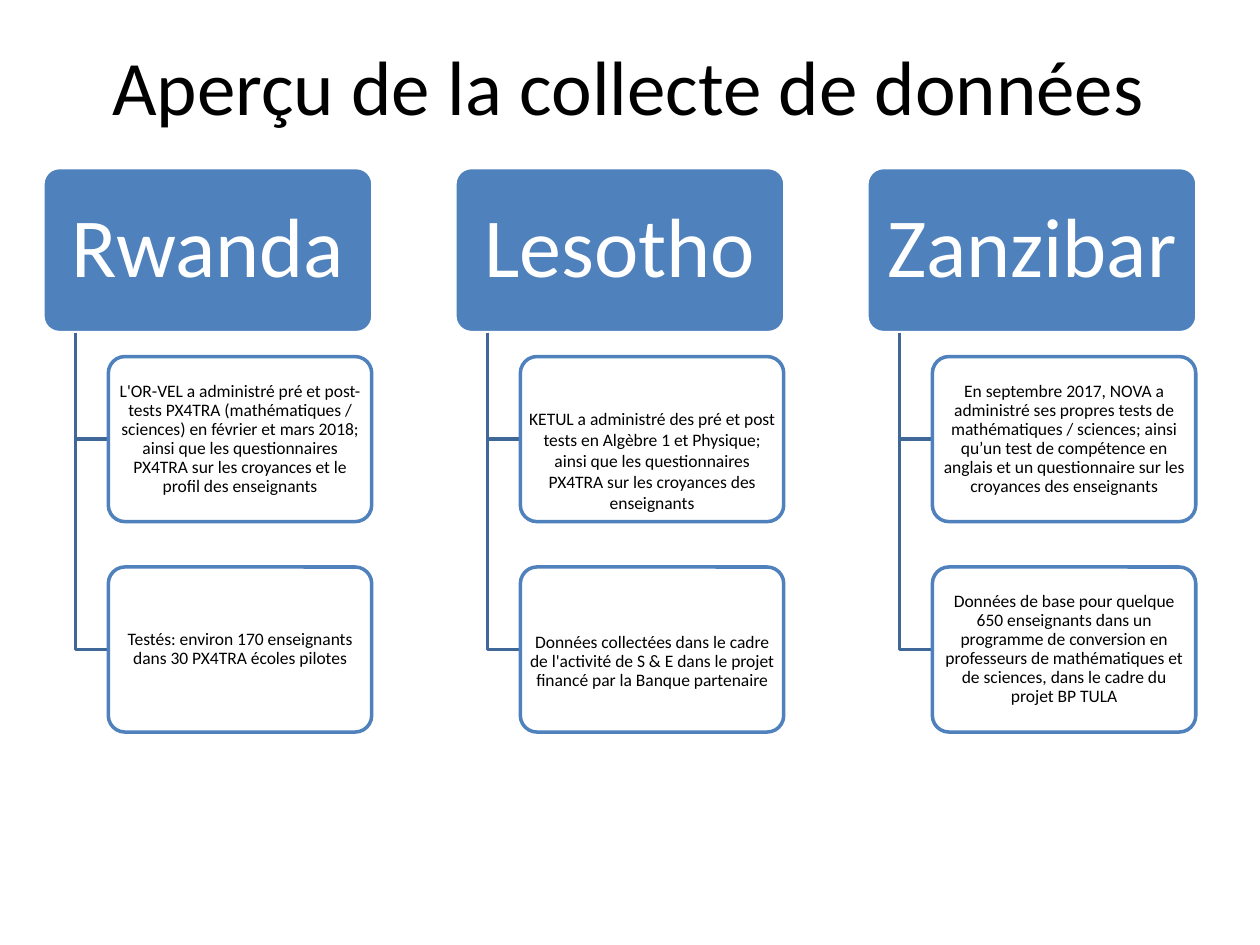
from lxml import etree
from pptx import Presentation
from pptx.dml.color import RGBColor
from pptx.enum import shapes, text
from pptx.oxml import ns
from pptx.util import Inches, Pt

BLUE = RGBColor(0x4F, 0x81, 0xBD)
DARK_BLUE = RGBColor(0x3F, 0x67, 0x97)
WHITE = RGBColor(0xFF, 0xFF, 0xFF)
BLACK = RGBColor(0x00, 0x00, 0x00)
FONT = "Calibri"

# Column grid, in inches
LEFT, COLUMN_STEP = 0.34, 3.27
HEADER_TOP, HEADER_WIDTH, BOX_HEIGHT = 1.33, 2.62, 1.31
INDENT = 0.26
CARD_TOP, CARD_STEP, CARD_WIDTH = 2.83, 1.67, 2.09

# Country, then its cards: wording, line spacing, extra space above the text
COLUMNS = [
    ("Rwanda", [
        ("L'OR-VEL a administré pré et post-tests PX4TRA (mathématiques / sciences) "
         "en février et mars 2018; ainsi que les questionnaires PX4TRA sur les "
         "croyances et le profil des enseignants", 0.9, 0),
        ("Testés: environ 170 enseignants dans 30 PX4TRA écoles pilotes", 0.9, 0),
    ]),
    ("Lesotho", [
        ("KETUL a administré des pré et post tests en Algèbre 1 et Physique; ainsi "
         "que les questionnaires PX4TRA sur les croyances des enseignants", 1.0, 0.34),
        ("Données collectées dans le cadre de l'activité de S & E dans le projet "
         "financé par la Banque partenaire", 0.9, 0.2),
    ]),
    ("Zanzibar", [
        ("En septembre 2017, NOVA a administré ses propres tests de mathématiques / "
         "sciences; ainsi qu’un test de compétence en anglais et un questionnaire "
         "sur les croyances des enseignants", 0.9, 0),
        ("Données de base pour quelque 650 enseignants dans un programme de "
         "conversion en professeurs de mathématiques et de sciences, dans le cadre "
         "du projet BP TULA", 0.9, 0),
    ]),
]


def write(box, wording, size, color, spacing=1.0, side=0.1, top=0.05, bottom=0.05):
    frame = box.text_frame
    frame.word_wrap = True
    frame.vertical_anchor = text.MSO_ANCHOR.MIDDLE
    frame.margin_left = frame.margin_right = Inches(side)
    frame.margin_top, frame.margin_bottom = Inches(top), Inches(bottom)
    para = frame.paragraphs[0]
    para.text = wording
    para.alignment = text.PP_ALIGN.CENTER
    para.line_spacing = spacing
    para.font.name = FONT
    para.font.size = Pt(size)
    para.font.color.rgb = color


def add_title(page, wording):
    box = page.shapes.add_textbox(Inches(0.49), Inches(0.17), Inches(9), Inches(1))
    write(box, wording, 44, BLACK)


def add_rounded_box(page, left, top, width, fill, line):
    box = page.shapes.add_shape(
        shapes.MSO_SHAPE.ROUNDED_RECTANGLE,
        Inches(left), Inches(top), Inches(width), Inches(BOX_HEIGHT))
    box.adjustments[0] = 0.1
    box.shadow.inherit = False
    box.fill.solid()
    box.fill.fore_color.rgb = fill
    box.line.color.rgb = line
    box.line.width = Pt(2)
    return box


def add_header(page, left, country):
    box = add_rounded_box(page, left, HEADER_TOP, HEADER_WIDTH, BLUE, WHITE)
    write(box, country, 48, WHITE, 0.9, 0.1, 0.07, 0.07)


def add_card(page, left, top, wording, spacing, space_above):
    box = add_rounded_box(page, left, top, CARD_WIDTH, WHITE, BLUE)
    # Fill at 90 % opacity
    color = box.fill._xPr.find(ns.qn("a:solidFill"))[0]
    etree.SubElement(color, ns.qn("a:alpha"), val="90000")
    write(box, wording, 10, BLACK, spacing, 0.02, 0.01 + space_above, 0.01)


def add_branch(page, left, top, bottom):
    builder = page.shapes.build_freeform(Inches(left), Inches(top))
    builder.add_line_segments(
        [(Inches(left), Inches(bottom)), (Inches(left + INDENT), Inches(bottom))],
        close=False)
    branch = builder.convert_to_shape()
    branch.shadow.inherit = False
    branch.fill.background()
    branch.line.color.rgb = DARK_BLUE
    branch.line.width = Pt(2)


def main():
    deck = Presentation()
    deck.slide_width, deck.slide_height = Inches(10), Inches(7.5)
    page = deck.slides.add_slide(deck.slide_layouts[6])

    add_title(page, "Aperçu de la collecte de données")

    # One column per country: header, then cards hanging from branches
    for column, (country, cards) in enumerate(COLUMNS):
        left = LEFT + column * COLUMN_STEP
        add_header(page, left, country)
        for row, card in enumerate(cards):
            top = CARD_TOP + row * CARD_STEP
            add_branch(page, left + INDENT, HEADER_TOP + BOX_HEIGHT, top + BOX_HEIGHT / 2)
            add_card(page, left + 2 * INDENT, top, *card)

    deck.save("out.pptx")


if __name__ == "__main__":
    main()
